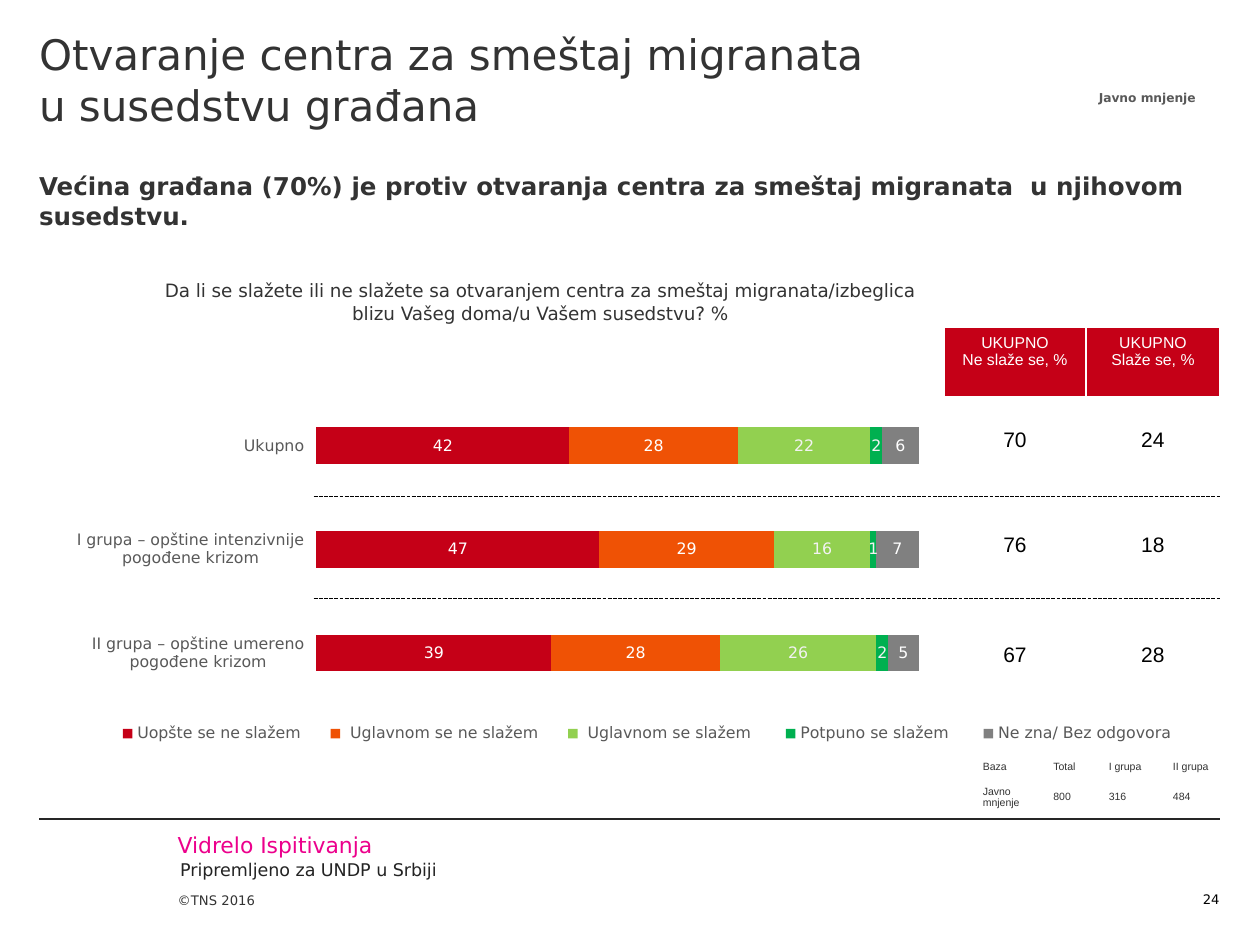
from dataclasses import dataclass

import pptx
import pptx.chart.data
import pptx.dml.color
import pptx.enum.chart
import pptx.enum.dml
import pptx.enum.shapes
import pptx.enum.text
import pptx.oxml
import pptx.oxml.ns
import pptx.util

Inches = pptx.util.Inches
Pt = pptx.util.Pt
ALIGN = pptx.enum.text.PP_ALIGN
ANCHOR = pptx.enum.text.MSO_ANCHOR

COLORS = {
    "red": "C50017", "orange": "EF5205", "lime": "92D050", "green": "00B050",
    "gray": "808080", "pale": "F2F2F2", "white": "FFFFFF", "black": "000000",
    "text": "333333", "axis": "595959", "rule": "262626", "client": "232323",
    "agency": "EC008C",
}
SANS = "DejaVu Sans"
LEFT, RIGHT, WIDTH = 0.31, 9.68, 9.37


@dataclass(frozen=True)
class Box:
    left: float
    top: float
    width: float
    height: float

    def lengths(self) -> list:
        return [Inches(v) for v in (self.left, self.top, self.width, self.height)]


@dataclass(frozen=True)
class Answer:
    name: str
    values: tuple
    color: str
    label: str = "white"


@dataclass(frozen=True)
class Rule:
    left: float
    top: float
    color: str
    dashed: bool = False


def rgb(name: str) -> pptx.dml.color.RGBColor:
    return pptx.dml.color.RGBColor.from_string(COLORS[name])


def style_font(font, size: float, color: str, name: str = SANS, bold: bool = False) -> None:
    font.size, font.name, font.bold = Pt(size), name, bold
    font.color.rgb = rgb(color)


def write_text(frame, text: str, *, size: float, color: str = "text", name: str = SANS,
               bold: bool = False, align=ALIGN.LEFT) -> None:
    """Fill the first paragraph; each newline becomes a line break."""
    para = frame.paragraphs[0]
    para.alignment, para.space_before = align, Pt(0)
    for number, line in enumerate(text.split("\n")):
        if number:
            para.add_line_break()
        span = para.add_run()
        span.text = line
        style_font(span.font, size, color, name, bold)


def set_frame(frame, insets: tuple, anchor=ANCHOR.TOP, wrap: bool = True) -> None:
    frame.margin_left, frame.margin_top, frame.margin_right, frame.margin_bottom = (
        Inches(v) for v in insets)
    frame.vertical_anchor, frame.word_wrap = anchor, wrap
    frame.auto_size = pptx.enum.text.MSO_AUTO_SIZE.NONE


def add_text(page, box: Box, text: str, *, insets: tuple = (0, 0, 0, 0),
             anchor=ANCHOR.TOP, wrap: bool = True, **style) -> None:
    frame = page.shapes.add_textbox(*box.lengths()).text_frame
    set_frame(frame, insets, anchor, wrap)
    write_text(frame, text, **style)


def fill_placeholder(shape, box: Box, text: str, **style) -> None:
    shape.left, shape.top, shape.width, shape.height = box.lengths()
    set_frame(shape.text_frame, (0, 0.23, 0, 0))
    props = shape.text_frame.paragraphs[0]._p.get_or_add_pPr()
    props.set("marL", "0")
    props.set("indent", "0")
    props.append(props.makeelement(pptx.oxml.ns.qn("a:buNone"), {}))
    write_text(shape.text_frame, text, **style)


def add_rule(page, rule: Rule) -> None:
    line = page.shapes.add_connector(
        pptx.enum.shapes.MSO_CONNECTOR.STRAIGHT,
        Inches(rule.left), Inches(rule.top), Inches(RIGHT), Inches(rule.top))
    line.line.color.rgb, line.line.width = rgb(rule.color), Pt(0.75)
    if rule.dashed:
        line.line.dash_style = pptx.enum.dml.MSO_LINE.SQUARE_DOT
    props = line._element.spPr
    props.append(props.makeelement(pptx.oxml.ns.qn("a:effectLst"), {}))


def set_borders(cell, bottom: float) -> None:
    props = cell._tc.get_or_add_tcPr()
    for index, (side, width) in enumerate(zip("LRTB", (1, 1, 1, bottom))):
        props.insert(index, pptx.oxml.parse_xml(
            f'<a:ln{side} {pptx.oxml.ns.nsdecls("a")} w="{Pt(width)}"><a:solidFill>'
            f'<a:srgbClr val="{COLORS["white"]}"/></a:solidFill></a:ln{side}>'))


def add_grid(page, box: Box, widths: list, heights: list, rows: list, *,
             header: dict, body: dict, header_fill: str = "") -> None:
    table = page.shapes.add_table(len(rows), len(widths), *box.lengths()).table
    table.first_row = table.horz_banding = False
    for column, width in zip(table.columns, widths):
        column.width = Inches(width)
    for row, height in zip(table.rows, heights):
        row.height = Inches(height)
    for r, texts in enumerate(rows):
        for c, text in enumerate(texts):
            cell = table.cell(r, c)
            filled = r == 0 and header_fill
            if filled:
                cell.fill.solid()
                cell.fill.fore_color.rgb = rgb(header_fill)
            else:
                cell.fill.background()
            cell.vertical_anchor = ANCHOR.TOP if filled else ANCHOR.MIDDLE
            set_borders(cell, 1 if r else 3)
            write_text(cell.text_frame, text, **(body if r else header))


def place_part(part, index: int, inner: bool, x: float, y: float, w: float, h: float) -> None:
    """Give the plot area or the legend a manual layout, in shares of the chart."""
    for old in part.xpath("c:layout"):
        part.remove(old)
    target = '<c:layoutTarget val="inner"/>' if inner else ""
    part.insert(index, pptx.oxml.parse_xml(
        f'<c:layout {pptx.oxml.ns.nsdecls("c")}><c:manualLayout>{target}'
        f'<c:xMode val="edge"/><c:yMode val="edge"/><c:x val="{x}"/><c:y val="{y}"/>'
        f'<c:w val="{w}"/><c:h val="{h}"/></c:manualLayout></c:layout>'))


def add_answers_chart(page, box: Box, groups: list, answers: list) -> None:
    data = pptx.chart.data.CategoryChartData(number_format="0")
    data.categories = groups
    for answer in answers:
        data.add_series(answer.name, answer.values)
    kinds = pptx.enum.chart
    chart = page.shapes.add_chart(kinds.XL_CHART_TYPE.BAR_STACKED, *box.lengths(), data).chart
    chart.has_title = False
    style_font(chart.font, 10, "black")

    plot = chart.plots[0]
    plot.gap_width, plot.overlap, plot.vary_by_categories = 182, 100, False
    for series, answer in zip(plot.series, answers):
        series.format.fill.solid()
        series.format.fill.fore_color.rgb = rgb(answer.color)
        labels = series.data_labels
        labels.show_value = True
        labels.number_format, labels.number_format_is_linked = "0", False
        style_font(labels.font, 9, answer.label)

    chart.category_axis.reverse_order = True
    chart.category_axis.format.line.fill.background()
    style_font(chart.category_axis.tick_labels.font, 9, "axis")
    values = chart.value_axis
    values.minimum_scale, values.maximum_scale = 0, 100
    values.has_major_gridlines = values.visible = False

    chart.has_legend = True
    chart.legend.position = kinds.XL_LEGEND_POSITION.BOTTOM
    chart.legend.include_in_layout = False
    style_font(chart.legend.font, 9, "axis")
    place_part(chart.element.xpath("c:chart/c:plotArea")[0], 0, True, 0.235, 0.103, 0.51, 0.656)
    place_part(chart.element.xpath("c:chart/c:legend")[0], 1, False, 0.05, 0.79, 0.93, 0.06)


def main() -> None:
    deck = pptx.Presentation()
    deck.slide_width, deck.slide_height = Inches(10), Inches(7.5)
    page = deck.slides.add_slide(deck.slide_layouts[1])

    # Title and key finding
    fill_placeholder(page.shapes.title, Box(LEFT, 0, WIDTH, 1.13),
                     "Otvaranje centra za smeštaj migranata \nu susedstvu građana", size=24)
    fill_placeholder(page.placeholders[1], Box(LEFT, 1.13, WIDTH, 0.83),
                     "Većina građana (70%) je protiv otvaranja centra za smeštaj migranata"
                     "  u njihovom susedstvu.", size=14, bold=True)

    # Answers by group
    add_answers_chart(page, Box(LEFT, 2.74, WIDTH, 3.76), [
        "Ukupno", "I grupa – opštine intenzivnije pogođene krizom",
        "II grupa – opštine umereno pogođene krizom",
    ], [
        Answer("Uopšte se ne slažem", (42, 47, 39), "red"),
        Answer(" Uglavnom se ne slažem", (28, 29, 28), "orange"),
        Answer(" Uglavnom se slažem ", (22, 16, 26), "lime", "pale"),
        Answer("Potpuno se slažem ", (2, 1, 2), "green", "pale"),
        Answer("Ne zna/ Bez odgovora", (6, 7, 5), "gray"),
    ])

    # Totals and sample sizes
    centered = {"name": "Arial", "align": ALIGN.CENTER}
    add_grid(page, Box(7.49, 2.6, 2.19, 2.97), [1.13, 1.06], [0.56, 0.66, 1.01, 0.74],
             [["UKUPNO\nNe slaže se, %", "UKUPNO\nSlaže se, %"],
              ["70", "24"], ["76", "18"], ["67", "28"]],
             header={"size": 9, "color": "white", **centered},
             body={"size": 12, "color": "black", **centered}, header_fill="red")
    small = {"size": 6, "name": "Arial"}
    add_grid(page, Box(7.7, 5.99, 2.07, 0.44), [0.56, 0.44, 0.51, 0.56], [0.18, 0.26],
             [["Baza", "Total", "I grupa", "II grupa"], ["Javno mnjenje", "800", "316", "484"]],
             header=small, body=small)

    # Separators and footer rule
    for rule in (Rule(2.49, 3.94, "black", True), Rule(2.49, 4.75, "black", True),
                 Rule(LEFT, 6.5, "rule")):
        add_rule(page, rule)

    # Question and audience tag
    padding = (0.1, 0.05, 0.1, 0.05)
    add_text(page, Box(1.06, 2.17, 6.46, 0.45),
             "Da li se slažete ili ne slažete sa otvaranjem centra za smeštaj migranata/izbeglica "
             "blizu Vašeg doma/u Vašem susedstvu? %",
             insets=padding, size=10.5, align=ALIGN.CENTER)
    add_text(page, Box(8.6, 0.67, 1.01, 0.22), "Javno mnjenje", insets=padding, wrap=False,
             size=7, color="axis", bold=True, align=ALIGN.CENTER)

    # Footer
    add_text(page, Box(1.41, 6.6, 3.31, 0.21), "Vidrelo Ispitivanja", size=12.5, color="agency")
    add_text(page, Box(1.43, 6.82, 6.81, 0.17), "Pripremljeno za UNDP u Srbiji",
             size=10, color="client")
    add_text(page, Box(1.41, 6.92, 0.83, 0.58), "©TNS 2016", insets=(0, 0, 0, 0.29),
             anchor=ANCHOR.BOTTOM, size=7.5)
    add_text(page, Box(9.13, 6.92, 0.55, 0.28), "24", anchor=ANCHOR.BOTTOM,
             size=7.5, color="black", align=ALIGN.RIGHT)

    deck.save("out.pptx")


if __name__ == "__main__":
    main()
